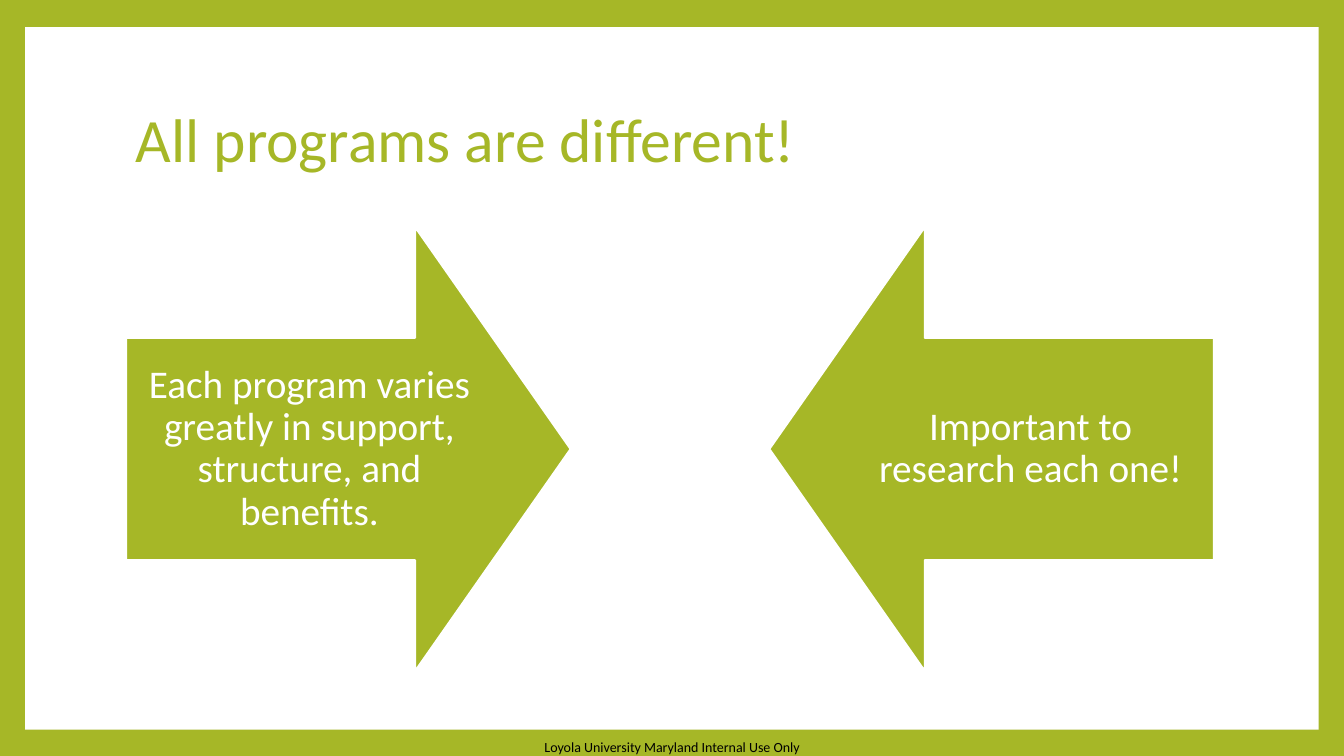
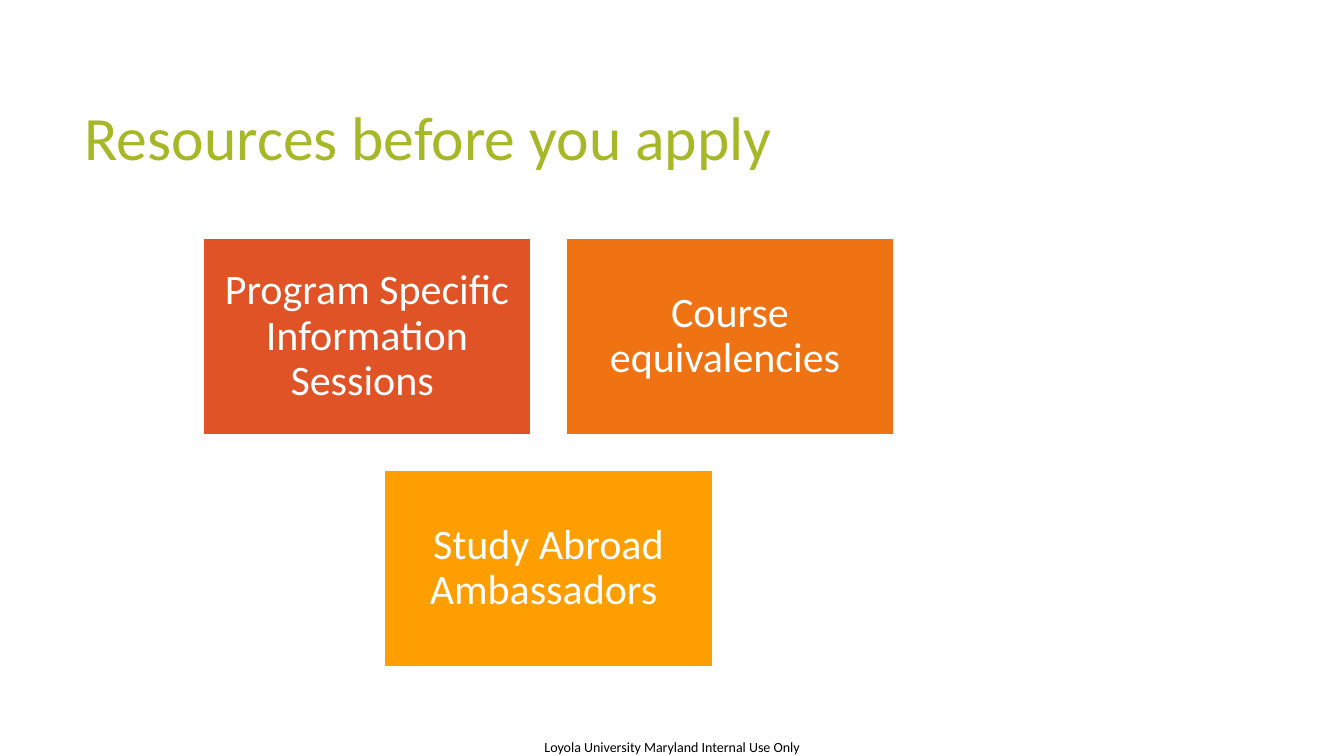
import pptx
import pptx.dml.color
import pptx.enum.shapes
import pptx.enum.text
import pptx.util

SHAPE = pptx.enum.shapes.MSO_SHAPE
ALIGN = pptx.enum.text.PP_ALIGN
ANCHOR = pptx.enum.text.MSO_ANCHOR

# Content
FOOTER = "Loyola University Maryland Internal Use Only"
PROGRAMS_TITLE = "All programs are different!"
ARROWS = [
    (SHAPE.RIGHT_ARROW, "Each program varies greatly in support, structure, and benefits."),
    (SHAPE.LEFT_ARROW, "Important to research each one!"),
]
RESOURCES_TITLE = "Resources before you apply"
# Each row of cards is centred; the trailing spaces belong to the labels
CARD_ROWS = [
    [("Program Specific Information Sessions ", "red"), ("Course equivalencies ", "orange")],
    [("Study Abroad Ambassadors ", "amber")],
]

# Theme
THEME = {
    "font": "Calibri",
    "green": "A6B727", "white": "FFFFFF", "black": "000000",
    "red": "DF5327", "orange": "EF7213", "amber": "FE9E00",
    "title": 44, "card": 30, "arrow": 28, "footer": 10,
    "outline": 1.5, "line_spacing": 0.9,
}
WIDTH, HEIGHT = 13.33, 7.5


def color(name):
    return pptx.dml.color.RGBColor.from_string(THEME[name])


def box(left, top, width, height):
    return [pptx.util.Inches(value) for value in (left, top, width, height)]


def write(shape, text, size, text_color, align=ALIGN.LEFT, inset=None, spacing=None):
    frame = shape.text_frame
    frame.word_wrap = True
    frame.vertical_anchor = ANCHOR.MIDDLE
    if inset is not None:
        frame.margin_left = frame.margin_right = pptx.util.Inches(inset)
        frame.margin_top = frame.margin_bottom = pptx.util.Inches(inset)
    paragraph = frame.paragraphs[0]
    paragraph.text = text
    paragraph.alignment = align
    paragraph.line_spacing = spacing
    paragraph.font.name = THEME["font"]
    paragraph.font.size = pptx.util.Pt(THEME[size])
    paragraph.font.color.rgb = color(text_color)


def add_filled(slide, kind, place, fill, outlined=True):
    shape = slide.shapes.add_shape(kind, *box(*place))
    shape.shadow.inherit = False
    shape.fill.solid()
    shape.fill.fore_color.rgb = color(fill)
    if outlined:
        shape.line.color.rgb = color("white")
        shape.line.width = pptx.util.Pt(THEME["outline"])
    else:
        shape.line.fill.background()
    return shape


def add_slide(presentation, title, title_place, background, panel=None):
    slide = presentation.slides.add_slide(presentation.slide_layouts[6])
    slide.background.fill.solid()
    slide.background.fill.fore_color.rgb = color(background)
    if panel:
        add_filled(slide, SHAPE.RECTANGLE, panel, "white", outlined=False)
    footer = slide.shapes.add_textbox(*box(5.4, 7.33, 2.57, 0.17))
    write(footer, FOOTER, "footer", "black", inset=0)
    heading = slide.shapes.add_textbox(*box(*title_place))
    write(heading, title, "title", "green", spacing=THEME["line_spacing"])
    return slide


def add_programs(presentation):
    margin = 0.25
    slide = add_slide(presentation, PROGRAMS_TITLE, (1.25, 0.67, 10.8, 1.48), "green",
                      panel=(margin, 0.27, WIDTH - 2 * margin, 6.97))
    # Two square arrows facing each other
    left, top, side, gap = 1.25, 2.25, 4.41, 1.97
    for column, (kind, text) in enumerate(ARROWS):
        place = (left + column * (side + gap), top, side, side)
        arrow = add_filled(slide, kind, place, "green")
        arrow.adjustments[0] = 0.5
        arrow.adjustments[1] = 0.35
        write(arrow, text, "arrow", "white", ALIGN.CENTER, 0.22, THEME["line_spacing"])


def add_resources(presentation):
    slide = add_slide(presentation, RESOURCES_TITLE, (0.74, 0.67, 9.4, 1.44), "white")
    # Card rows share one centre line and one gap
    center, top, width, height, gap = 5.44, 2.36, 3.26, 1.96, 0.34
    for row, cards in enumerate(CARD_ROWS):
        left = center - (len(cards) * (width + gap) - gap) / 2
        for column, (text, fill) in enumerate(cards):
            place = (left + column * (width + gap), top + row * (height + gap), width, height)
            card = add_filled(slide, SHAPE.RECTANGLE, place, fill)
            write(card, text, "card", "white", ALIGN.CENTER, 0.12, THEME["line_spacing"])


def main():
    presentation = pptx.Presentation()
    presentation.slide_width = pptx.util.Inches(WIDTH)
    presentation.slide_height = pptx.util.Inches(HEIGHT)
    add_programs(presentation)
    add_resources(presentation)
    presentation.save("out.pptx")


if __name__ == "__main__":
    main()
